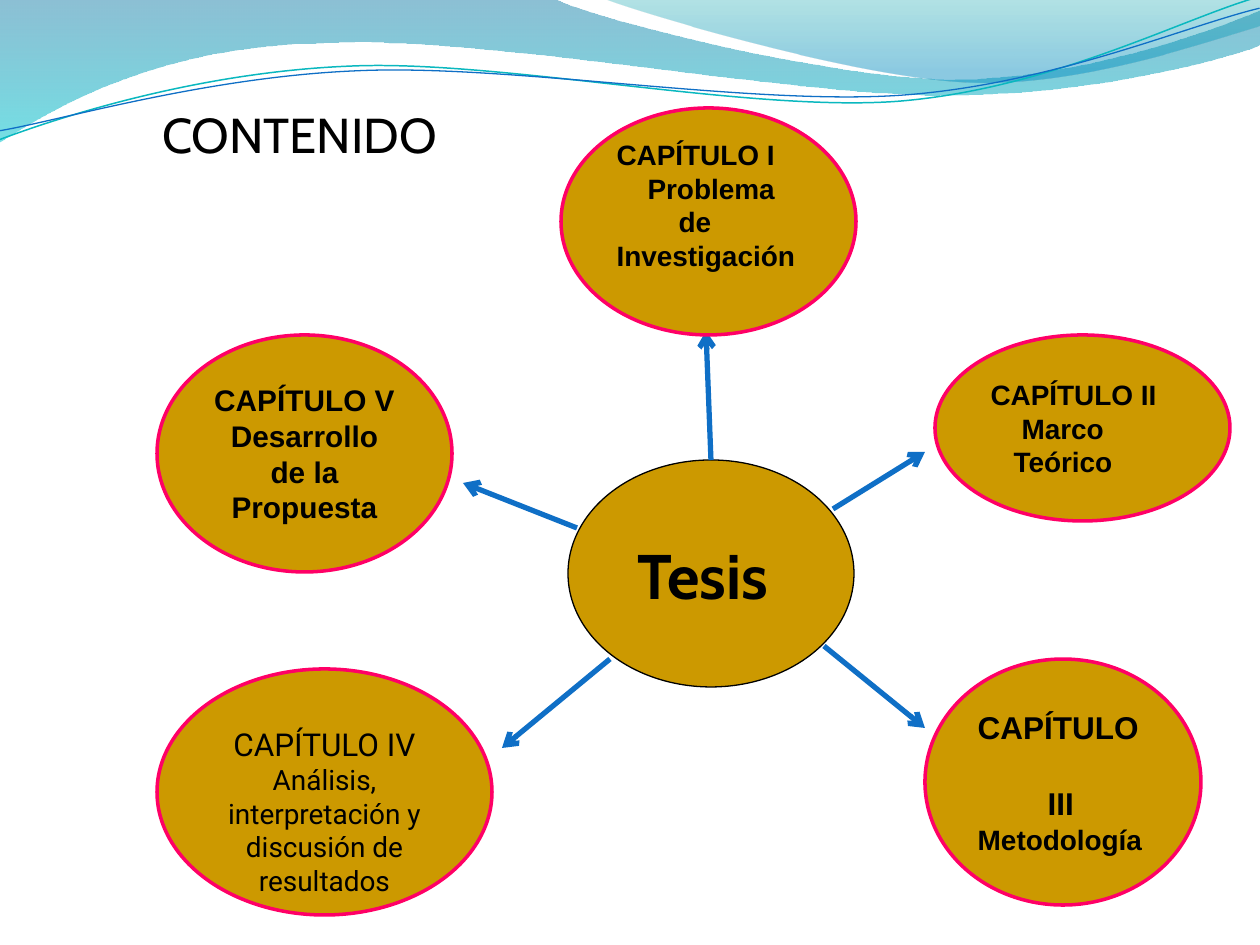
import math

import pptx
import pptx.dml.color
import pptx.enum.shapes
import pptx.enum.text
import pptx.oxml.ns
import pptx.util
from lxml import etree

EMU_PER_PX = 914400 / 126
SLIDE_WIDTH, SLIDE_HEIGHT = 1260, 945
CURVE_TILT = -2.7

RGB = pptx.dml.color.RGBColor
BLACK = RGB(0x00, 0x00, 0x00)
OCHRE = RGB(0xCC, 0x99, 0x00)
PINK = RGB(0xFF, 0x00, 0x66)
BLUE = RGB(0x0F, 0x6F, 0xC6)
AQUA = RGB(0x0A, 0xB8, 0xBF)
DEEP_BLUE = RGB(0x00, 0x74, 0xA1)
CYAN = RGB(0x00, 0xC6, 0xCF)
TEAL = RGB(0x00, 0xA1, 0xA9)
SKY = RGB(0x00, 0x8B, 0xBF)

LEFT = pptx.enum.text.PP_ALIGN.LEFT
CENTER = pptx.enum.text.PP_ALIGN.CENTER
TOP = pptx.enum.text.MSO_ANCHOR.TOP
MIDDLE = pptx.enum.text.MSO_ANCHOR.MIDDLE

# Each outline is a start point followed by line ends (one point)
# and Bézier segments (two controls and an end).
WIDE_WAVE = [
    [(0, 0)], [(554, -1)], [(600, 21), (837, 79), (955, 79)],
    [(1075, 79), (1207, 33), (1260, 11)], [(1261, 45)],
    [(1239, 55), (1096, 96), (940, 95)], [(784, 95), (481, 35), (324, 43)],
    [(163, 45), (58, 105), (-1, 142)],
]
RIGHT_WAVE = [
    [(604, -1)], [(641, 14), (859, 78), (969, 82)],
    [(1079, 87), (1211, 40), (1260, 26)], [(1260, 0)],
]
AQUA_CURVE = [
    [(0, 140)], [(60, 117), (199, 72), (349, 66)],
    [(498, 59), (747, 112), (898, 101)], [(1050, 89), (1182, 19), (1257, -3)],
]
BLUE_CURVE = [
    [(0, 131)], [(59, 121), (207, 77), (357, 71)],
    [(508, 64), (752, 106), (903, 95)], [(1053, 84), (1186, 26), (1260, 8)],
]

ARROWS = [
    (711, 460, 706, 331), (833, 509, 925, 452), (824, 646, 925, 728),
    (610, 659, 502, 748), (577, 528, 463, 483),
]


def px(length):
    return pptx.util.Emu(round(length * EMU_PER_PX))


def qn(tag):
    return pptx.oxml.ns.qn(tag)


def turn(segments, degrees, center):
    """Return the segments turned clockwise about the center."""
    cos, sin = math.cos(math.radians(degrees)), math.sin(math.radians(degrees))
    cx, cy = center
    return [[(cx + (x - cx) * cos - (y - cy) * sin,
              cy + (x - cx) * sin + (y - cy) * cos) for x, y in segment]
            for segment in segments]


def add_outline(slide, segments, closed):
    """Add a freeform, joining each group of three points into a Bézier."""
    points = [point for segment in segments for point in segment]
    builder = slide.shapes.build_freeform(*points[0], scale=EMU_PER_PX)
    builder.add_line_segments(points[1:], close=closed)
    shape = builder.convert_to_shape()
    shape.shadow.inherit = False
    steps = iter(list(shape.element.spPr.iter(qn("a:lnTo"))))
    for segment in segments[1:]:
        group = [next(steps) for _ in segment]
        if len(group) == 3:
            curve = etree.Element(qn("a:cubicBezTo"))
            group[0].addprevious(curve)
            for step in group:
                curve.append(step[0])
                step.getparent().remove(step)
    return shape


def add_wave(slide, segments, stops):
    """Add a closed wave; stops are (position, colour, opacity percent)."""
    wave = add_outline(slide, segments, closed=True)
    wave.line.fill.background()
    wave.fill.gradient()
    wave.fill.gradient_angle = 270
    for stop, (position, color, _) in zip(wave.fill.gradient_stops, stops):
        stop.position = position
        stop.color.rgb = color
    colors = list(wave.element.spPr.iter(qn("a:srgbClr")))
    for color, (_, _, opacity) in zip(colors, stops):
        etree.SubElement(color, qn("a:alpha"), val=str(opacity * 1000))


def add_curve(slide, segments, center, color, width):
    """Add a tilted open curve whose segments are given as they show."""
    curve = add_outline(slide, turn(segments, -CURVE_TILT, center), closed=False)
    curve.rotation = CURVE_TILT
    # Rotation acts about the frame's middle, so move that to where it shows.
    middle = (curve.left + curve.width / 2, curve.top + curve.height / 2)
    pivot = tuple(length * EMU_PER_PX for length in center)
    [[(x, y)]] = turn([[middle]], CURVE_TILT, pivot)
    curve.left = pptx.util.Emu(round(x - curve.width / 2))
    curve.top = pptx.util.Emu(round(y - curve.height / 2))
    curve.fill.background()
    curve.line.color.rgb = color
    curve.line.width = pptx.util.Pt(width)


def write(para, text, *, size, font="Arial", bold=True, align=LEFT,
          margin=0, indent=0, before=0):
    para.alignment = align
    para.space_before = px(before)
    properties = para._p.get_or_add_pPr()
    properties.set("marL", str(px(margin)))
    properties.set("indent", str(px(indent)))
    span = para.add_run()
    span.text = text
    span.font.name = font
    span.font.size = pptx.util.Pt(size)
    span.font.bold = bold
    span.font.color.rgb = BLACK


def add_ellipse(slide, bounds, lines, *, line=PINK, width=2, top=None,
                bottom=6, **style):
    """Add an ellipse of (text, format) lines; top anchors them at that inset."""
    ellipse = slide.shapes.add_shape(
        pptx.enum.shapes.MSO_SHAPE.OVAL, *map(px, bounds))
    ellipse.shadow.inherit = False
    ellipse.fill.solid()
    ellipse.fill.fore_color.rgb = OCHRE
    ellipse.line.color.rgb = line
    ellipse.line.width = pptx.util.Pt(width)
    frame = ellipse.text_frame
    frame.word_wrap = True
    frame.vertical_anchor = MIDDLE if top is None else TOP
    frame.margin_top = px(6 if top is None else top)
    frame.margin_bottom = px(bottom)
    for number, (text, changes) in enumerate(lines):
        para = frame.add_paragraph() if number else frame.paragraphs[0]
        write(para, text, **{**style, **changes})


def add_arrow(slide, ends):
    arrow = slide.shapes.add_connector(
        pptx.enum.shapes.MSO_CONNECTOR.STRAIGHT, *map(px, ends))
    arrow.line.color.rgb = BLUE
    arrow.line.width = pptx.util.Pt(3)
    properties = arrow.element.spPr
    etree.SubElement(properties.find(qn("a:ln")), qn("a:tailEnd"), type="arrow")
    etree.SubElement(properties, qn("a:effectLst"))


def set_title(slide, text):
    title = slide.shapes.title
    title.left, title.top, title.width, title.height = map(px, (49, 98, 501, 72))
    title.text_frame.vertical_anchor = TOP
    write(title.text_frame.paragraphs[0], text,
          size=28, font="Cabin", bold=False, align=CENTER)
    title.element.getparent().append(title.element)


def add_chapters(slide):
    add_ellipse(slide, (157, 669, 335, 246), [
        ("CAPÍTULO IV", {"size": 18}),
        ("Análisis, interpretación y discusión de resultados", {}),
    ], top=20, size=16, font="Roboto", bold=False, align=CENTER)
    add_ellipse(slide, (935, 335, 295, 186), [
        ("CAPÍTULO II", {}),
        ("Marco", {"margin": 31}),
        ("Teórico", {"margin": 23}),
    ], size=16)
    add_ellipse(slide, (925, 659, 276, 246), [
        ("CAPÍTULO", {}),
        ("III", {"margin": 70, "before": 38}),
        ("Metodología", {"size": 16}),
    ], size=18)
    add_ellipse(slide, (561, 108, 295, 227), [
        ("CAPÍTULO I", {}),
        ("Problema", {"margin": 31}),
        ("de Investigación", {"indent": 62}),
    ], bottom=39, size=16)
    add_ellipse(slide, (157, 335, 295, 237), [
        ("CAPÍTULO V", {}),
        ("Desarrollo de la Propuesta", {}),
    ], size=17, align=CENTER)


def main():
    deck = pptx.Presentation()
    deck.slide_width, deck.slide_height = px(SLIDE_WIDTH), px(SLIDE_HEIGHT)
    slide = deck.slides.add_slide(deck.slide_layouts[5])
    add_wave(slide, WIDE_WAVE, [(0, DEEP_BLUE, 45), (1, CYAN, 55)])
    add_wave(slide, RIGHT_WAVE, [(0, TEAL, 30), (0.8, SKY, 45)])
    add_curve(slide, AQUA_CURVE, (629, 72), AQUA, 0.85)
    add_curve(slide, BLUE_CURVE, (629, 74), BLUE, 0.75)
    add_ellipse(slide, (568, 460, 286, 227), [("Tesis", {"margin": 15})],
                line=BLACK, width=0.75, top=43, size=36, font="Cabin")
    for ends in ARROWS:
        add_arrow(slide, ends)
    add_chapters(slide)
    set_title(slide, "CONTENIDO")
    deck.save("out.pptx")


if __name__ == "__main__":
    main()
